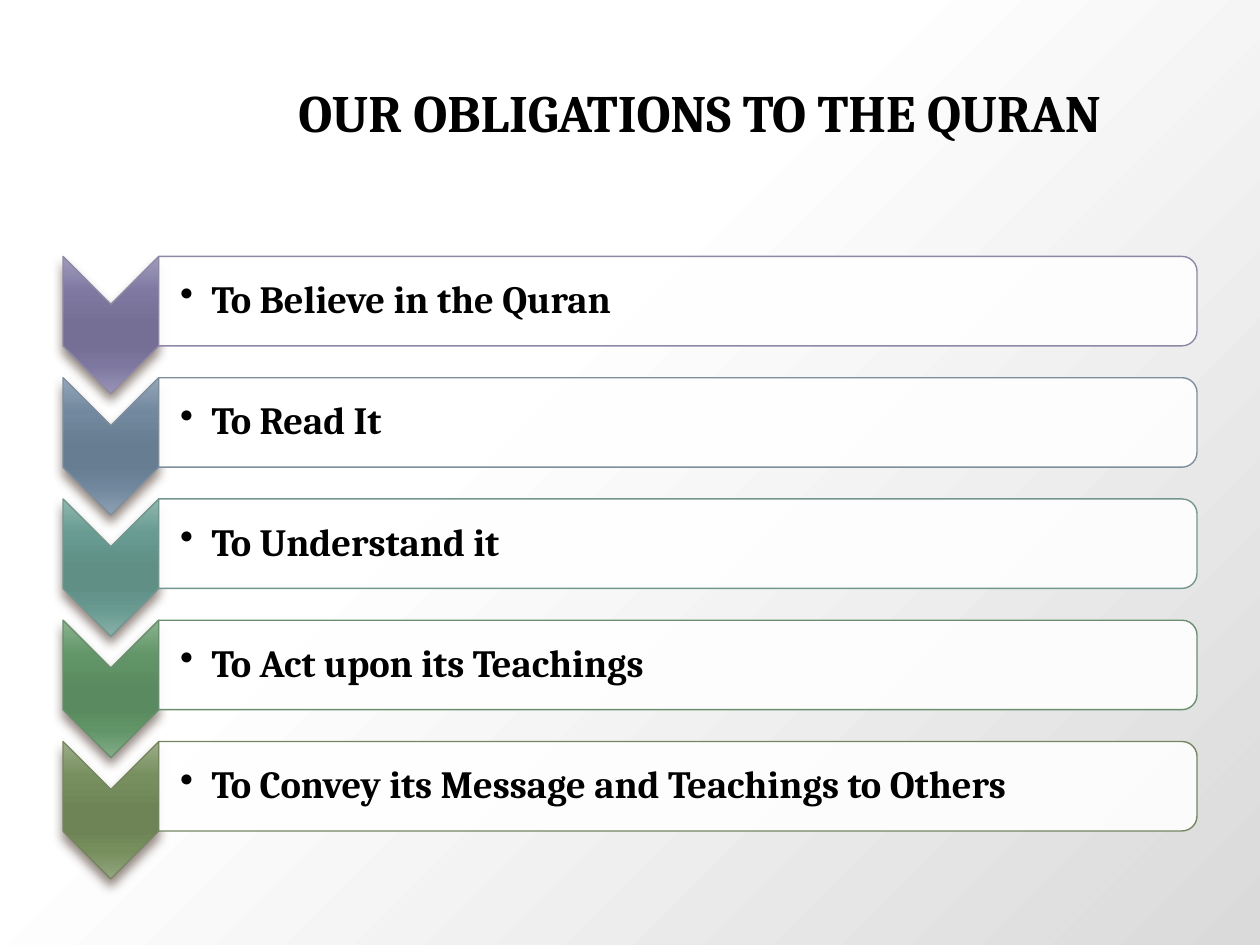
"""Build a slide listing five obligations as a vertical chevron list."""
from pptx import Presentation
from pptx.dml.color import RGBColor
from pptx.enum.shapes import MSO_SHAPE
from pptx.enum.text import MSO_ANCHOR, PP_ALIGN
from pptx.oxml import parse_xml
from pptx.oxml.ns import nsdecls, qn
from pptx.util import Inches, Pt

CHEVRON = MSO_SHAPE.CHEVRON
ROUNDED_END = MSO_SHAPE.ROUND_2_SAME_RECTANGLE
MIDDLE = MSO_ANCHOR.MIDDLE
CENTER, LEFT = PP_ALIGN.CENTER, PP_ALIGN.LEFT
BLACK = RGBColor(0x00, 0x00, 0x00)
WHITE = RGBColor(0xFF, 0xFF, 0xFF)
SHADOW = RGBColor(0x4E, 0x3B, 0x30)

TITLE = "OUR OBLIGATIONS TO THE QURAN"
OBLIGATIONS = [
    ("To Believe in the Quran", "8D89A4", "A09BBC 7F79A2 756F95 756F95 7E78A1 9994B6"),
    ("To Read It", "7E8E9D", "95A7BA 71889E 677D92 677D92 70879D 8EA1B3"),
    ("To Understand it", "73968F", "8FB7AE 689B91 608F86 608F86 689A90 88B0A8"),
    ("To Act upon its Teachings", "698E6E", "8BB38F 629668 5A8B60 5A8B60 619568 83AC88"),
    ("To Convey its Message and Teachings to Others", "748560",
     "9BAD88 778F5E 6E8456 6E8456 778E5D 94A681"),
]
CHEVRON_STOPS = (0, 25, 50, 65, 80, 100)
BACKGROUND_STOPS = [(0, "FFFFFF"), (40, "FFFFFF"), (100, "DADADA")]
BACKGROUND_SHADE = ('<a:path path="circle"><a:fillToRect l="51000" t="-20000" '
                    'r="200000" b="100000"/></a:path>')
CHEVRON_SHADE = '<a:lin ang="0" scaled="0"/>'

FIRST_CENTER, LAST_CENTER = 2.58, 6.43
PITCH = (LAST_CENTER - FIRST_CENTER) / (len(OBLIGATIONS) - 1)
CHEVRON_X, CHEVRON_LENGTH, CHEVRON_SPAN = 0.88, 1.09, 0.76
BAR_LEFT, BAR_LENGTH, BAR_HEIGHT = 1.26, 8.24, 0.71
BAR_RISE = (CHEVRON_LENGTH - BAR_HEIGHT) / 2
LABEL_WIDTH, LABEL_HEIGHT = 8.2, 0.64
LABEL_FRAME = {
    "word_wrap": True, "vertical_anchor": MIDDLE, "margin_left": Inches(0.17),
    "margin_top": Inches(0.02), "margin_right": Inches(0.02), "margin_bottom": Inches(0.02),
}


def set_attributes(target, values):
    for name, value in values.items():
        setattr(target, name, value)


def write_text(paragraph, text, size, alignment):
    paragraph.text = text
    paragraph.alignment = alignment
    set_attributes(paragraph.runs[0].font, {"name": "Cambria", "size": Pt(size), "bold": True})
    paragraph.runs[0].font.color.rgb = BLACK


def replace_fill(parent, stops, shade):
    """Swap the solid fill of parent for a gradient."""
    marks = "".join(f'<a:gs pos="{position * 1000}"><a:srgbClr val="{color}"/></a:gs>'
                    for position, color in stops)
    gradient = parse_xml(f'<a:gradFill {nsdecls("a")} rotWithShape="1">'
                         f"<a:gsLst>{marks}</a:gsLst>{shade}</a:gradFill>")
    parent.replace(parent.find(qn("a:solidFill")), gradient)


def add_turned_shape(slide, preset, center_x, center_y, length, span, line_color):
    """Add a white shape turned a quarter clockwise about its center."""
    shape = slide.shapes.add_shape(
        preset, Inches(center_x - length / 2), Inches(center_y - span / 2),
        Inches(length), Inches(span))
    shape.rotation = 90
    shape.shadow.inherit = False
    shape.fill.solid()
    shape.fill.fore_color.rgb = WHITE
    shape.line.color.rgb = RGBColor.from_string(line_color)
    shape.line.width = Pt(0.79)
    return shape


def add_chevron(slide, center_y, line_color, colors):
    chevron = add_turned_shape(slide, CHEVRON, CHEVRON_X, center_y,
                               CHEVRON_LENGTH, CHEVRON_SPAN, line_color)
    properties = chevron.element.spPr
    replace_fill(properties, zip(CHEVRON_STOPS, colors.split()), CHEVRON_SHADE)
    properties.find(qn("a:effectLst")).append(parse_xml(
        f'<a:outerShdw {nsdecls("a")} blurRad="{Pt(6)}" dist="{Pt(4)}" dir="5400000" '
        f'rotWithShape="0"><a:srgbClr val="{SHADOW}"><a:alpha val="60000"/>'
        "</a:srgbClr></a:outerShdw>"))


def add_bar(slide, center_y, line_color):
    bar = add_turned_shape(slide, ROUNDED_END, BAR_LEFT + BAR_LENGTH / 2, center_y,
                           BAR_HEIGHT, BAR_LENGTH, line_color)
    color = bar.element.spPr.find(qn("a:solidFill"))[0]
    color.append(parse_xml(f'<a:alpha {nsdecls("a")} val="90000"/>'))


def add_label(slide, center_y, text):
    label = slide.shapes.add_textbox(Inches(BAR_LEFT), Inches(center_y - LABEL_HEIGHT / 2),
                                     Inches(LABEL_WIDTH), Inches(LABEL_HEIGHT))
    set_attributes(label.text_frame, LABEL_FRAME)
    paragraph = label.text_frame.paragraphs[0]
    paragraph.line_spacing = 0.9
    properties = paragraph._p.get_or_add_pPr()
    properties.set("marL", str(Inches(0.25)))
    properties.set("indent", str(Inches(-0.25)))
    properties.append(parse_xml(f'<a:buChar {nsdecls("a")} char="•"/>'))
    write_text(paragraph, text, 22, LEFT)


def main():
    presentation = Presentation()
    set_attributes(presentation, {"slide_width": Inches(10), "slide_height": Inches(7.5)})
    slide = presentation.slides.add_slide(presentation.slide_layouts[5])
    slide.background.fill.solid()
    replace_fill(slide.element.find(".//" + qn("p:bgPr")), BACKGROUND_STOPS, BACKGROUND_SHADE)

    title = slide.shapes.title
    set_attributes(title, {"left": Inches(1.61), "top": Inches(0.3),
                           "width": Inches(7.89), "height": Inches(1.17)})
    title.text_frame.vertical_anchor = MIDDLE
    write_text(title.text_frame.paragraphs[0], TITLE, 30, CENTER)

    for index, (text, line_color, colors) in enumerate(OBLIGATIONS):
        chevron_y = FIRST_CENTER + index * PITCH
        bar_y = chevron_y - BAR_RISE
        add_chevron(slide, chevron_y, line_color, colors)
        add_bar(slide, bar_y, line_color)
        add_label(slide, bar_y, text)

    presentation.save("out.pptx")


if __name__ == "__main__":
    main()
